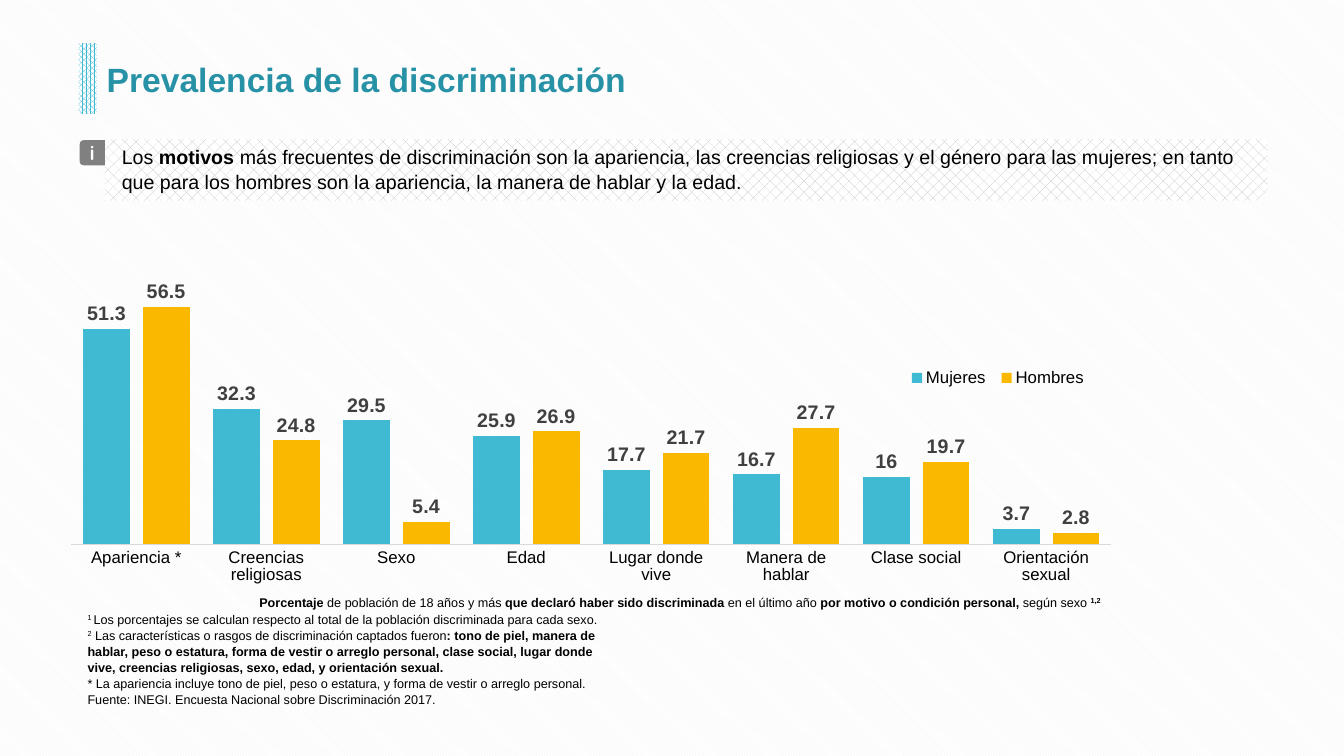
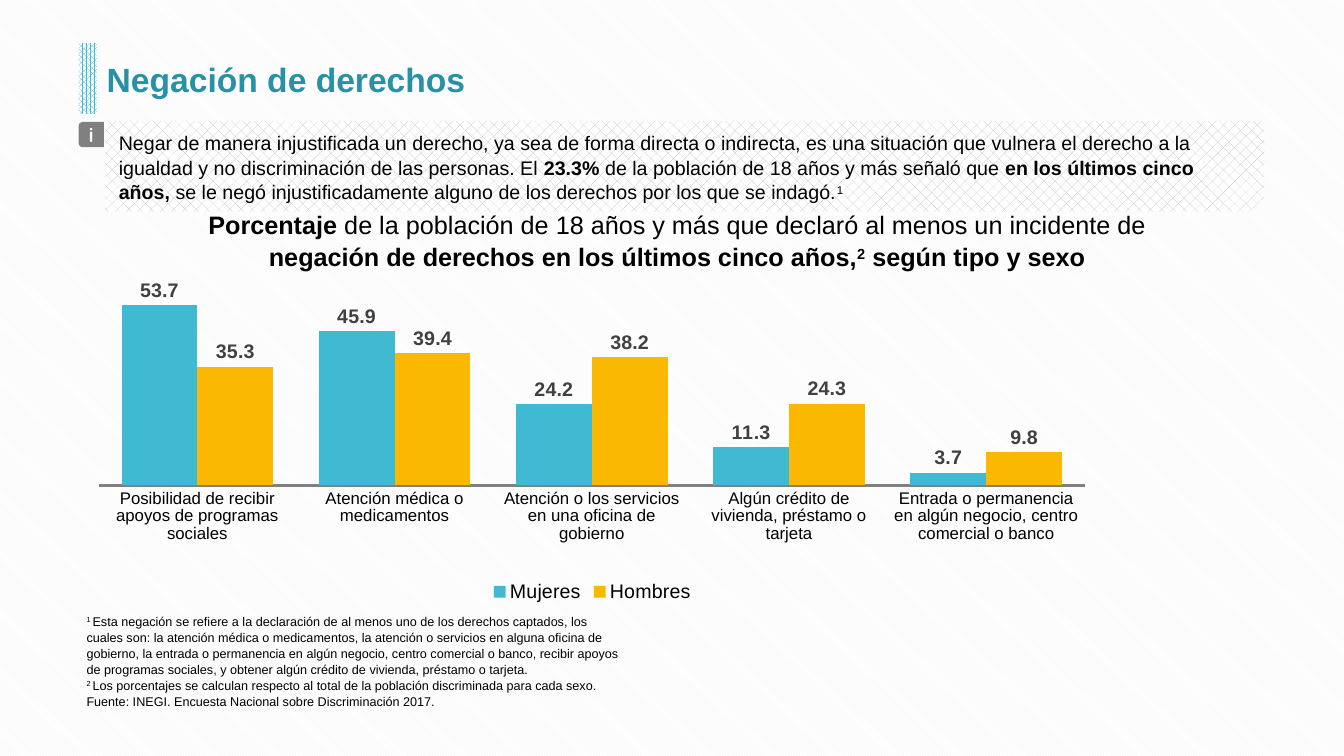
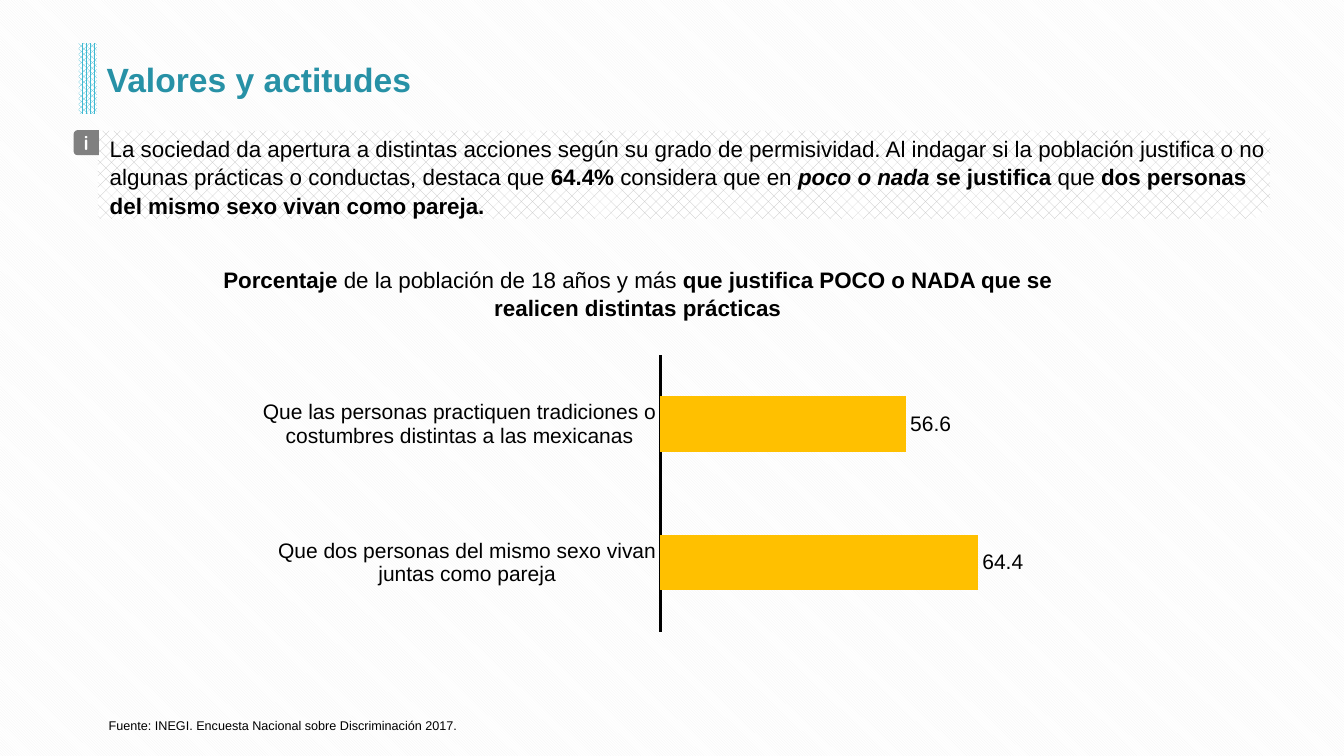
from dataclasses import dataclass

from pptx import Presentation
from pptx.chart.data import CategoryChartData
from pptx.dml.color import RGBColor
from pptx.enum.chart import XL_CHART_TYPE as ChartType
from pptx.enum.chart import XL_LABEL_POSITION as LabelPosition
from pptx.enum.chart import XL_LEGEND_POSITION as LegendPosition
from pptx.enum.chart import XL_TICK_MARK as TickMark
from pptx.enum.dml import MSO_PATTERN as Pattern
from pptx.enum.shapes import MSO_SHAPE as Shape
from pptx.enum.text import MSO_ANCHOR as Anchor
from pptx.enum.text import PP_ALIGN as Align
from pptx.oxml import parse_xml
from pptx.oxml.ns import nsdecls, qn
from pptx.util import Pt

PX = 9144
SOURCE = "Fuente: INEGI. Encuesta Nacional sobre Discriminación 2017."


def rgb(value):
    """Turn a hex string into a colour."""
    return RGBColor.from_string(value)


@dataclass(frozen=True)
class Theme:
    """Colours, fonts and type sizes shared by the slides."""

    font: str = "Arial"
    badge_font: str = "Quicksand"
    title: RGBColor = rgb("2791A6")
    text: RGBColor = rgb("000000")
    paper: RGBColor = rgb("FFFFFF")
    hatch: RGBColor = rgb("F2F2F2")
    band: RGBColor = rgb("BFBFBF")
    badge: RGBColor = rgb("808080")
    label: RGBColor = rgb("404040")
    pale_axis: RGBColor = rgb("D9D9D9")
    women: RGBColor = rgb("40BAD2")
    men: RGBColor = rgb("FAB900")
    amber: RGBColor = rgb("FFC000")
    title_size: int = 24
    heading_size: int = 18
    large_size: int = 16
    bar_size: int = 15
    body_size: int = 14
    axis_size: int = 12
    note_size: int = 9


THEME = Theme()


def scaled(box):
    """Turn a box in px into EMU."""
    return [value * PX for value in box]


def fill_pattern(fill, pattern, front):
    """Fill with a pattern over the paper colour."""
    fill.patterned()
    fill.pattern = pattern
    fill.fore_color.rgb = front
    fill.back_color.rgb = THEME.paper


def add_shape(slide, kind, box, color, pattern=None):
    """Add a preset shape with a solid or patterned fill and no outline."""
    shape = slide.shapes.add_shape(kind, *scaled(box))
    shape.shadow.inherit = False
    shape.line.fill.background()
    if pattern:
        fill_pattern(shape.fill, pattern, color)
    else:
        shape.fill.solid()
        shape.fill.fore_color.rgb = color
    return shape


def set_font(font, size, color, bold=False, name=THEME.font):
    """Format a font."""
    font.name, font.size, font.bold = name, Pt(size), bold
    font.color.rgb = color


def add_text(slide, box, paragraphs, *, size=THEME.body_size, color=THEME.text, name=THEME.font,
             align=Align.LEFT, anchor=Anchor.MIDDLE, inset=(10, 5), spacing=1.05):
    """Add text whose paragraphs are lists of (text, marks): b bold, i italic, s superscript."""
    frame = slide.shapes.add_textbox(*scaled(box)).text_frame
    frame.word_wrap = True
    frame.vertical_anchor = anchor
    frame.margin_left = frame.margin_right = inset[0] * PX
    frame.margin_top = frame.margin_bottom = inset[1] * PX
    for index, runs in enumerate(paragraphs):
        paragraph = frame.add_paragraph() if index else frame.paragraphs[0]
        paragraph.alignment = align
        paragraph.line_spacing = spacing
        for text, marks in runs:
            run = paragraph.add_run()
            run.text = text
            set_font(run.font, size, color, "b" in marks, name)
            run.font.italic = "i" in marks
            if "s" in marks:
                run._r.get_or_add_rPr().set("baseline", "30000")


def add_titled_slide(presentation, title):
    """Add a blank slide with the title and its striped bar."""
    slide = presentation.slides.add_slide(presentation.slide_layouts[6])
    add_shape(slide, Shape.RECTANGLE, (78, 43, 18, 70), THEME.women, Pattern.PERCENT_75)
    add_text(slide, (96, 36, 1161, 83), [[(title, "b")]], size=THEME.title_size, color=THEME.title)
    return slide


def add_info(slide, band, badge_at, text_box, runs, **text_format):
    """Add the hatched band, its info badge and its message."""
    strip = add_shape(slide, Shape.SNIP_1_RECTANGLE, band, THEME.band, Pattern.PERCENT_25)
    strip.element.spPr.find(qn("a:xfrm")).set("flipV", "1")
    badge_box = (*badge_at, 25, 25)
    badge = add_shape(slide, Shape.ROUND_2_SAME_RECTANGLE, badge_box, THEME.badge)
    badge.rotation = 270
    add_text(slide, badge_box, [[("i", "b")]], color=THEME.paper, name=THEME.badge_font,
             align=Align.CENTER, inset=(0, 0), spacing=1.0)
    add_text(slide, text_box, [runs], **text_format)


def add_caption(slide, box, runs, size):
    """Add a centred chart caption."""
    add_text(slide, box, [runs], size=size, align=Align.CENTER)


def add_notes(slide, box, paragraphs):
    """Add footnotes that end with the source."""
    add_text(slide, box, [*paragraphs, [(SOURCE, "")]], size=THEME.note_size, anchor=Anchor.BOTTOM)


def place_part(part, index, area, target=""):
    """Place a chart part by fractions of the chart."""
    for old in part.findall(qn("c:layout")):
        part.remove(old)
    modes = "".join(f'<c:{key}Mode val="edge"/>' for key in "xy")
    sizes = "".join(f'<c:{key} val="{value}"/>' for key, value in zip("xywh", area))
    part.insert(index, parse_xml(
        f'<c:layout {nsdecls("c")}><c:manualLayout>{target}{modes}{sizes}</c:manualLayout></c:layout>'))


def add_bars(slide, kind, box, categories, series, *, plot_area, gap, axis_line, scale=(0, 60),
             overlap=0, number_format="General", axis_size=THEME.axis_size,
             label_size=THEME.body_size, label_color=THEME.label, label_bold=True,
             legend_size=None, legend_area=None):
    """Add a bar chart from (name, values, colour) series."""
    data = CategoryChartData(number_format=number_format)
    data.categories = categories
    for name, values, _ in series:
        data.add_series(name, values)
    chart = slide.shapes.add_chart(kind, *scaled(box), data).chart
    chart.has_title = False
    set_font(chart.font, axis_size, THEME.text)

    plot = chart.plots[0]
    plot.vary_by_categories = False
    plot.gap_width, plot.overlap = gap, overlap
    for bars, (_, _, color) in zip(plot.series, series):
        bars.format.fill.solid()
        bars.format.fill.fore_color.rgb = color
        bars.invert_if_negative = False
        labels = bars.data_labels
        labels.show_value = True
        labels.position = LabelPosition.OUTSIDE_END
        labels.number_format = number_format
        labels.number_format_is_linked = False
        set_font(labels.font, label_size, label_color, label_bold)

    axis = chart.category_axis
    axis.major_tick_mark = axis.minor_tick_mark = TickMark.NONE
    axis.has_major_gridlines = False
    axis.format.line.color.rgb, axis.format.line.width = axis_line[0], Pt(axis_line[1])
    set_font(axis.tick_labels.font, axis_size, THEME.text)
    values_axis = chart.value_axis
    values_axis.has_major_gridlines = False
    values_axis.minimum_scale, values_axis.maximum_scale = scale
    values_axis.visible = False

    place_part(chart.element.find(".//" + qn("c:plotArea")), 0, plot_area,
               '<c:layoutTarget val="inner"/>')
    chart.has_legend = legend_size is not None
    if chart.has_legend:
        chart.legend.position = LegendPosition.BOTTOM
        chart.legend.include_in_layout = False
        set_font(chart.legend.font, legend_size, THEME.text)
        if legend_area:
            place_part(chart.element.find(".//" + qn("c:legend")), 1, legend_area)


def by_sex(women, men):
    """Pair the values of women and men with their colours."""
    return [("Mujeres", women, THEME.women), ("Hombres", men, THEME.men)]


def build_prevalence(presentation):
    """Build the slide on reasons for discrimination."""
    slide = add_titled_slide(presentation, "Prevalencia de la discriminación")
    add_info(slide, (104, 138, 1153, 61), (79, 139), (111, 128, 1126, 79), [
        ("Los ", ""), ("motivos", "b"),
        (" más frecuentes de discriminación son la apariencia, las creencias religiosas y el género "
         "para las mujeres; en tanto que para los hombres son la apariencia, la manera de hablar y "
         "la edad.", "")])
    add_bars(slide, ChartType.COLUMN_CLUSTERED, (57, 260, 1060, 348),
             ["Apariencia *", "Creencias religiosas", "Sexo", "Edad", "Lugar donde vive",
              "Manera de hablar", "Clase social", "Orientación sexual"],
             by_sex([51.3, 32.3, 29.5, 25.9, 17.7, 16.7, 16, 3.7],
                    [56.5, 24.8, 5.4, 26.9, 21.7, 27.7, 19.7, 2.8]),
             plot_area=(0.013, 0.086, 0.973, 0.719), gap=50, overlap=-27,
             axis_line=(THEME.pale_axis, 0.75), legend_size=THEME.axis_size,
             legend_area=(0.79, 0.29, 0.18, 0.08))
    add_caption(slide, (93, 584, 1163, 27), [
        ("Porcentaje ", "b"), ("de población de 18 años y más ", ""),
        ("que declaró haber sido discriminada ", "b"), ("en el último año ", ""),
        ("por motivo o condición personal, ", "b"), ("según sexo ", ""), ("1,2", "bs")],
        THEME.note_size)
    add_notes(slide, (77, 629, 538, 77), [
        [("1 ", "s"), ("Los porcentajes se calculan respecto al total de la población discriminada "
                       "para cada sexo.", "")],
        [("2", "s"), (" Las características o rasgos de discriminación captados fueron", ""),
         (": tono de piel, manera de hablar, peso o estatura, forma de vestir o arreglo personal, "
          "clase social, lugar donde vive, creencias religiosas, sexo, edad, y orientación sexual.",
          "b")],
        [("* La apariencia incluye tono de piel, peso o estatura, y forma de vestir o arreglo "
          "personal.", "")]])


def build_rights(presentation):
    """Build the slide on denied rights."""
    slide = add_titled_slide(presentation, "Negación de derechos")
    add_info(slide, (104, 120, 1150, 90), (78, 121), (108, 120, 1137, 91), [
        ("Negar de manera injustificada un derecho, ya sea de forma directa o indirecta, es una "
         "situación que vulnera el derecho a la igualdad y no discriminación de las personas. El ",
         ""),
        ("23.3%", "b"), (" de la población de 18 años y más señaló que ", ""),
        ("en los últimos cinco años,", "b"),
        (" se le negó injustificadamente alguno de los derechos por los que se indagó.", ""),
        ("1", "s")])
    add_bars(slide, ChartType.COLUMN_CLUSTERED, (70, 266, 1035, 336),
             ["Posibilidad de recibir apoyos de programas sociales",
              "Atención médica o medicamentos",
              "Atención o los servicios en una oficina de gobierno",
              "Algún crédito de vivienda, préstamo o tarjeta",
              "Entrada o permanencia en algún negocio, centro comercial o banco"],
             by_sex([53.7, 45.9, 24.2, 11.3, 3.7], [35.3, 39.4, 38.2, 24.3, 9.8]),
             plot_area=(0.027, 0.047, 0.945, 0.595), gap=60, axis_line=(THEME.badge, 2),
             number_format="0.0", legend_size=THEME.body_size)
    add_caption(slide, (194, 209, 955, 58), [
        ("Porcentaje ", "b"),
        ("de la población de 18 años y más que declaró al menos un incidente de", ""),
        (" negación de derechos en los últimos cinco años,", "b"), ("2", "bs"),
        (" según tipo y sexo", "b")], THEME.heading_size)
    add_notes(slide, (76, 631, 555, 77), [
        [("1 ", "s"),
         ("Esta negación se refiere a la declaración de al menos uno de los derechos captados, los "
          "cuales son: la atención médica o medicamentos, la atención o servicios en alguna oficina "
          "de gobierno, la entrada o permanencia en algún negocio, centro comercial o banco, recibir "
          "apoyos de programas sociales, y obtener algún crédito de vivienda, préstamo o tarjeta.",
          "")],
        [("2 ", "s"), ("Los porcentajes se calculan respecto al total de la población discriminada "
                       "para cada sexo.", "")]])


def build_values(presentation):
    """Build the slide on values and attitudes."""
    slide = add_titled_slide(presentation, "Valores y actitudes")
    add_info(slide, (97, 130, 1163, 87), (73, 129), (99, 128, 1173, 88), [
        ("La sociedad da apertura a distintas acciones según su grado de permisividad. Al indagar si "
         "la población justifica o no algunas prácticas o conductas, destaca que ", ""),
        ("64.4%", "b"), (" considera que en ", ""), ("poco o nada ", "bi"),
        ("se justifica ", "b"), ("que ", ""),
        ("dos personas del mismo sexo vivan como pareja.", "b")],
        size=THEME.large_size, anchor=Anchor.TOP)
    add_caption(slide, (175, 252, 915, 77), [
        ("Porcentaje ", "b"), ("de la población de 18 años y más ", ""),
        ("que justifica POCO o NADA que se realicen distintas prácticas", "b")], THEME.large_size)
    add_bars(slide, ChartType.BAR_CLUSTERED, (237, 337, 834, 305),
             ["Que dos personas del mismo sexo vivan juntas como pareja",
              "Que las personas practiquen tradiciones o costumbres distintas a las mexicanas"],
             [("Series 1", [64.4, 56.6], THEME.amber)],
             plot_area=(0.501, 0.05, 0.44, 0.9), gap=150, axis_line=(THEME.text, 2),
             scale=(30, 70), axis_size=THEME.bar_size, label_size=THEME.bar_size,
             label_color=THEME.text, label_bold=False)
    add_notes(slide, (98, 655, 785, 77), [])


def main():
    """Build and save the presentation."""
    presentation = Presentation()
    presentation.slide_width, presentation.slide_height = scaled((1333, 750))
    fill_pattern(presentation.slide_master.background.fill, Pattern.LIGHT_DOWNWARD_DIAGONAL,
                 THEME.hatch)
    build_prevalence(presentation)
    build_rights(presentation)
    build_values(presentation)
    presentation.save("out.pptx")


if __name__ == "__main__":
    main()
